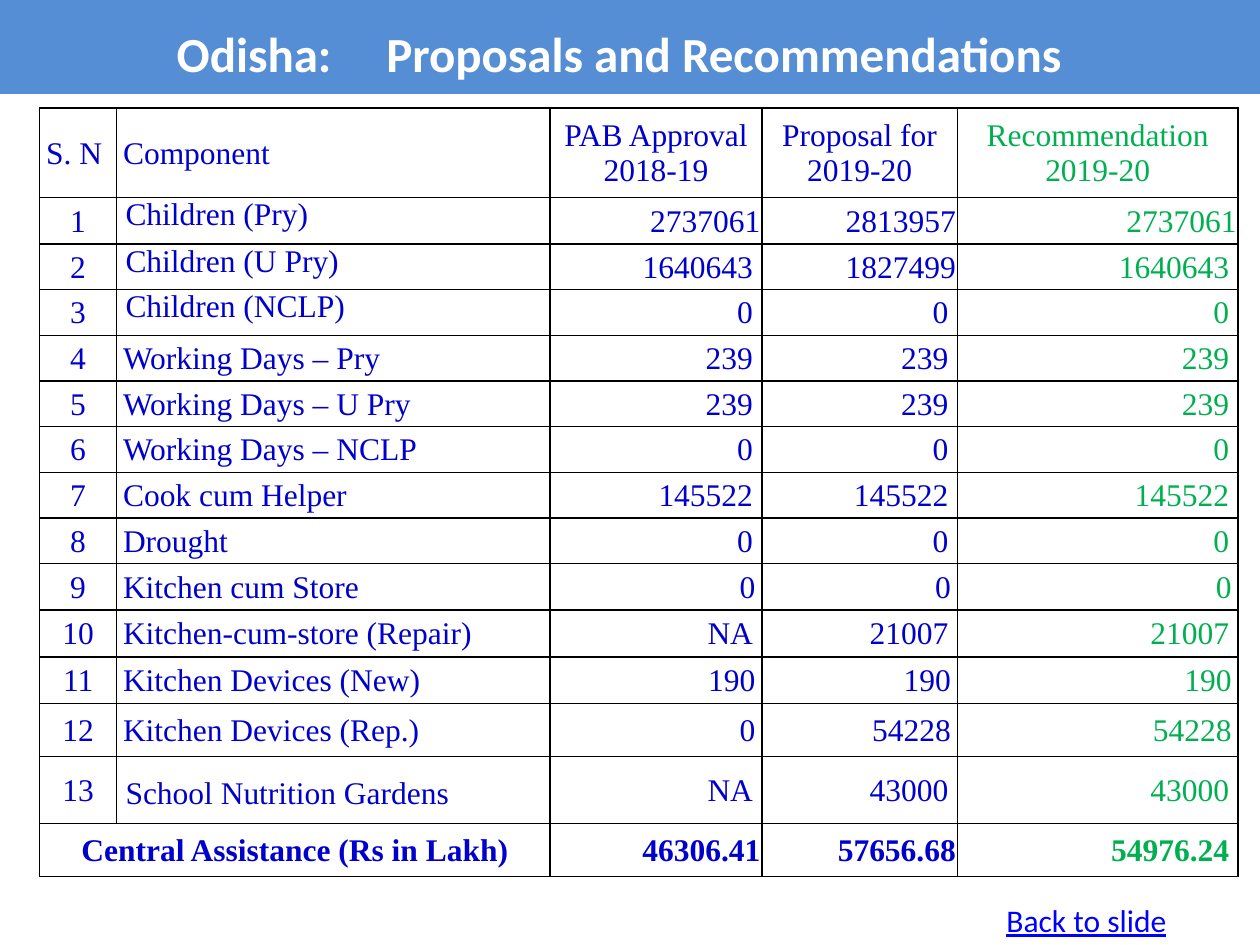
from lxml.etree import SubElement
from pptx import Presentation
from pptx.dml.color import RGBColor
from pptx.enum.text import MSO_ANCHOR, MSO_AUTO_SIZE, PP_ALIGN
from pptx.oxml.ns import qn
from pptx.util import Cm, Pt

WHITE = RGBColor(0xFF, 0xFF, 0xFF)
BAND_BLUE = RGBColor(0x55, 0x8E, 0xD5)
TEXT_BLUE = RGBColor(0x00, 0x00, 0xCC)
GREEN = RGBColor(0x00, 0xB0, 0x50)
LINK_BLUE = RGBColor(0x00, 0x00, 0xFF)
BORDER = "000000"

TIGHT, MEDIUM, WIDE = 0.03, 0.13, 0.18
COLUMN_WIDTHS = [1.55, 8.74, 4.27, 3.94, 5.66]
ROW_HEIGHTS = [1.8, 0.94] + [0.92] * 7 + [0.94] * 3 + [1.07, 1.35, 1.07]

HEADINGS = ["S. N", "Component", "PAB Approval 2018-19",
            "Proposal for\n2019-20", "Recommendation\n2019-20"]
COMPONENTS = [
    ("Children (Pry)", ["2737061", "2813957", "2737061"], [TIGHT] * 3),
    ("Children (U Pry)", ["1640643", "1827499", "1640643"], [WIDE, TIGHT, WIDE]),
    ("Children (NCLP)", ["0", "0", "0"], [WIDE] * 3),
    ("Working Days – Pry", ["239", "239", "239"], [WIDE] * 3),
    ("Working Days – U Pry", ["239", "239", "239"], [WIDE] * 3),
    ("Working Days – NCLP", ["0", "0", "0"], [WIDE] * 3),
    ("Cook cum Helper", ["145522", "145522", "145522"], [WIDE] * 3),
    ("Drought", ["0", "0", "0"], [WIDE] * 3),
    ("Kitchen cum Store", ["0", "0", "0"], [MEDIUM] * 3),
    ("Kitchen-cum-store (Repair)", ["NA", "21007", "21007"], [WIDE] * 3),
    ("Kitchen Devices (New)", ["190", "190", "190"], [MEDIUM] * 3),
    ("Kitchen Devices (Rep.)", ["0", "54228", "54228"], [MEDIUM] * 3),
    ("School Nutrition Gardens", ["NA", "43000", "43000"], [WIDE] * 3),
]
TOTALS = ["46306.41", "57656.68", "54976.24"]
TOTAL_INSETS = [TIGHT, TIGHT, WIDE]


def add_run(paragraph, text, font_name, size, color, bold=False):
    """Append a formatted run to the paragraph and return it."""
    run = paragraph.add_run()
    run.text = text
    run.font.name = font_name
    run.font.size = Pt(size)
    run.font.bold = bold
    run.font.color.rgb = color
    return run


def place_title(slide, left, top, width, height):
    """Turn the title placeholder into the blue heading band."""
    title = slide.shapes.title
    title.left, title.top, title.width, title.height = map(Cm, (left, top, width, height))
    title.fill.solid()
    title.fill.fore_color.rgb = BAND_BLUE
    frame = title.text_frame
    frame.word_wrap = True
    frame.auto_size = MSO_AUTO_SIZE.SHAPE_TO_FIT_TEXT
    frame.vertical_anchor = MSO_ANCHOR.MIDDLE
    frame.margin_right = Cm(0.7)
    heading = frame.paragraphs[0]
    heading.alignment = PP_ALIGN.CENTER
    heading.line_spacing = 1.4
    add_run(heading, "Odisha:", "Calibri", 28, WHITE, True)
    gap = add_run(heading, " ", "Calibri", 28, WHITE, True)
    gap.font._element.set("spc", "2500")
    add_run(heading, "Proposals and Recommendations", "Calibri", 28, WHITE, True)


def style_cell(cell, inset, anchor=MSO_ANCHOR.MIDDLE):
    """Give a cell its insets, anchor, black borders and white fill."""
    cell.margin_left = cell.margin_right = Cm(inset)
    cell.margin_top = Cm(0.03 if anchor == MSO_ANCHOR.MIDDLE else 0)
    cell.margin_bottom = 0
    cell.vertical_anchor = anchor
    properties = cell._tc.get_or_add_tcPr()
    for side in ("lnL", "lnR", "lnT", "lnB"):
        line = SubElement(properties, qn(f"a:{side}"), w=str(Pt(1)))
        SubElement(SubElement(line, qn("a:solidFill")), qn("a:srgbClr"), val=BORDER)
    cell.fill.solid()
    cell.fill.fore_color.rgb = WHITE


def write_cell(cell, text, alignment, color=TEXT_BLUE, bold=False):
    """Write each line of text as one paragraph of the cell."""
    for index, line in enumerate(text.split("\n")):
        paragraph = cell.text_frame.add_paragraph() if index else cell.text_frame.paragraphs[0]
        paragraph.alignment = alignment
        add_run(paragraph, line, "Times New Roman", 18, color, bold)


def fill_figures(table, row, figures, insets, bold=False):
    """Fill the three number columns of a row, the recommendation in green."""
    for column, (figure, inset) in enumerate(zip(figures, insets), start=2):
        cell = table.cell(row, column)
        style_cell(cell, inset)
        write_cell(cell, figure, PP_ALIGN.RIGHT, GREEN if column == 4 else TEXT_BLUE, bold)


def place_table(slide, left, top, width, height):
    """Build the table of proposals and recommendations."""
    table = slide.shapes.add_table(len(ROW_HEIGHTS), len(COLUMN_WIDTHS),
                                   Cm(left), Cm(top), Cm(width), Cm(height)).table
    table.first_row = table.horz_banding = False
    for column, column_width in zip(table.columns, COLUMN_WIDTHS):
        column.width = Cm(column_width)
    for row, row_height in zip(table.rows, ROW_HEIGHTS):
        row.height = Cm(row_height)

    for column, heading in enumerate(HEADINGS):
        cell = table.cell(0, column)
        style_cell(cell, MEDIUM)
        write_cell(cell, heading, PP_ALIGN.LEFT if column < 2 else PP_ALIGN.CENTER,
                   GREEN if column == 4 else TEXT_BLUE)

    for row, (component, figures, insets) in enumerate(COMPONENTS, start=1):
        number, name = table.cell(row, 0), table.cell(row, 1)
        style_cell(number, MEDIUM)
        write_cell(number, str(row), PP_ALIGN.CENTER)
        style_cell(name, WIDE if row <= 3 or row == 13 else MEDIUM,
                   MSO_ANCHOR.TOP if row <= 3 else MSO_ANCHOR.MIDDLE)
        write_cell(name, component, PP_ALIGN.LEFT)
        fill_figures(table, row, figures, insets)
    table.cell(13, 1).text_frame.paragraphs[0].line_spacing = 1.15

    last = len(ROW_HEIGHTS) - 1
    assistance = table.cell(last, 0)
    for column in range(2):
        style_cell(table.cell(last, column), MEDIUM)
    assistance.merge(table.cell(last, 1))
    write_cell(assistance, "Central Assistance (Rs in Lakh)", PP_ALIGN.CENTER, bold=True)
    fill_figures(table, last, TOTALS, TOTAL_INSETS, bold=True)


def place_back_label(slide, left, top, width, height):
    """Add the underlined label at the bottom right."""
    back = slide.shapes.add_textbox(Cm(left), Cm(top), Cm(width), Cm(height))
    back.text_frame.word_wrap = True
    back.text_frame.auto_size = MSO_AUTO_SIZE.SHAPE_TO_FIT_TEXT
    label = add_run(back.text_frame.paragraphs[0], "Back to slide", "Calibri", 18, LINK_BLUE)
    label.font.underline = True


def main():
    """Build and save the slide."""
    presentation = Presentation()
    presentation.slide_width, presentation.slide_height = Cm(25.4), Cm(19.05)
    slide = presentation.slides.add_slide(presentation.slide_layouts[5])
    place_title(slide, 0, -0.13, 25.4, 1.93)
    place_table(slide, 0.8, 2.18, sum(COLUMN_WIDTHS), sum(ROW_HEIGHTS))
    place_back_label(slide, 20.04, 18.03, 5.99, 1.02)
    presentation.save("out.pptx")


if __name__ == "__main__":
    main()
